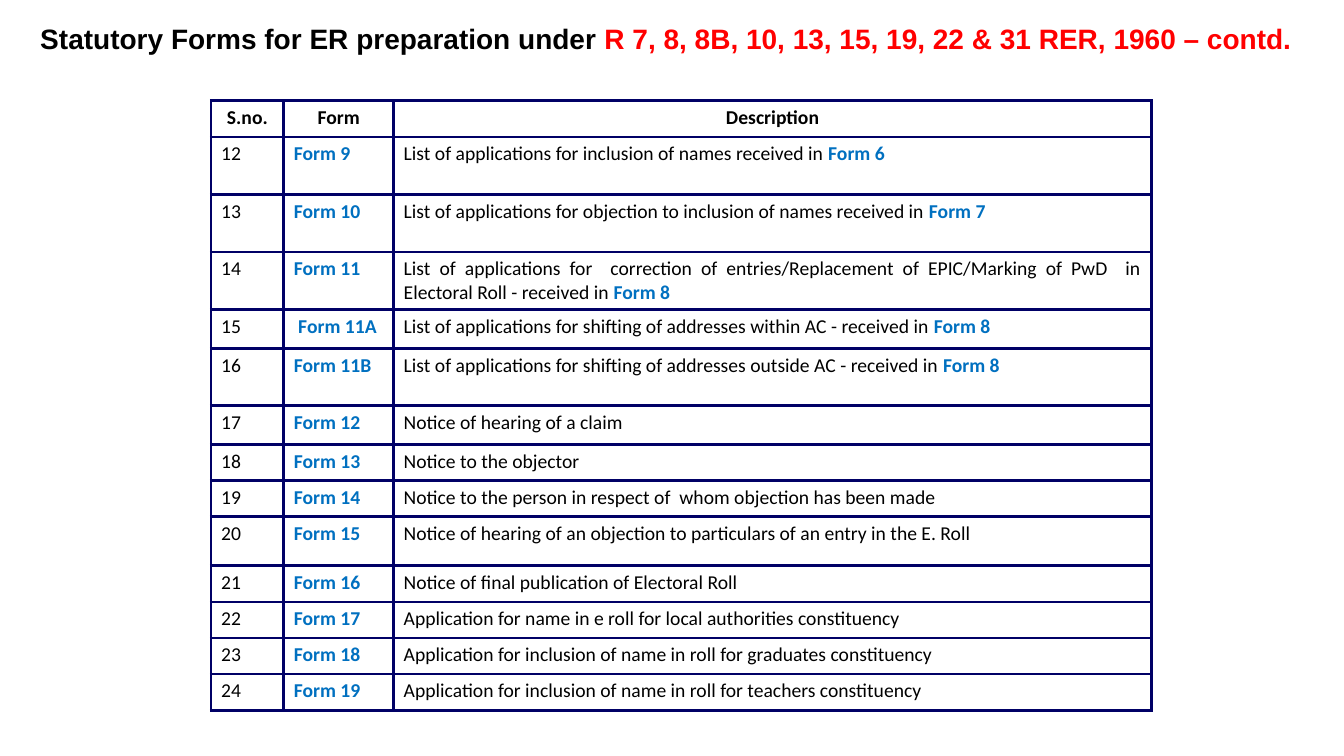
import pptx
import pptx.dml.color
import pptx.enum.text
import pptx.oxml
import pptx.oxml.ns
import pptx.util

Cm = pptx.util.Cm
ALIGN = pptx.enum.text.PP_ALIGN
ANCHOR = pptx.enum.text.MSO_ANCHOR

BLACK, RED, BLUE, NAVY = "000000", "FF0000", "0070C0", "000066"
FIRST_NUMBER = 12
COLUMN_WIDTHS = (1.83, 2.77, 19.1)
HEADINGS = ("S.no.", "Form", "Description")
SINGLE, RELAXED, MEDIUM, DOUBLE = 0.91, 0.97, 1.24, 1.45

FORMS = [
    ("Form 9", "List of applications for inclusion of names received in ", "Form 6", DOUBLE),
    ("Form 10", "List of applications for objection to inclusion of names received in ", "Form 7", DOUBLE),
    ("Form 11", "List of applications for  correction of entries/Replacement of EPIC/Marking of PwD  in "
     "Electoral Roll - received in ", "Form 8", DOUBLE),
    (" Form 11A", "List of applications for shifting of addresses within AC - received in ", "Form 8", RELAXED),
    ("Form 11B", "List of applications for shifting of addresses outside AC - received in ", "Form 8", DOUBLE),
    ("Form 12", "Notice of hearing of a claim", "", RELAXED),
    ("Form 13", "Notice to the objector", "", SINGLE),
    ("Form 14", "Notice to the person in respect of  whom objection has been made", "", SINGLE),
    ("Form 15", "Notice of hearing of an objection to particulars of an entry in the E. Roll", "", MEDIUM),
    ("Form 16", "Notice of final publication of Electoral Roll", "", SINGLE),
    ("Form 17", "Application for name in e roll for local authorities constituency", "", SINGLE),
    ("Form 18", "Application for inclusion of name in roll for graduates constituency", "", SINGLE),
    ("Form 19", "Application for inclusion of name in roll for teachers constituency", "", SINGLE),
]


def rgb(hex_color):
    return pptx.dml.color.RGBColor.from_string(hex_color)


def add_runs(tf, runs, font, size, align):
    p = tf.paragraphs[0]
    p.alignment = align
    for text, color, bold in runs:
        r = p.add_run()
        r.text = text
        r.font.name = font
        r.font.size = pptx.util.Pt(size)
        r.font.bold = bold
        r.font.color.rgb = rgb(color)


def add_title(slide, runs):
    sp = slide.shapes.title
    sp.left, sp.top, sp.width, sp.height = Cm(0.76), Cm(0.41), Cm(32.79), Cm(1.12)
    tf = sp.text_frame
    tf.word_wrap = True
    tf.auto_size = pptx.enum.text.MSO_AUTO_SIZE.NONE
    tf.vertical_anchor = ANCHOR.MIDDLE
    add_runs(tf, runs, "Arial", 20, ALIGN.JUSTIFY)


def set_borders(cell, color, width):
    tcPr = cell._tc.get_or_add_tcPr()
    for side in ("lnL", "lnR", "lnT", "lnB"):
        tcPr.append(pptx.oxml.parse_xml(
            f'<a:{side} {pptx.oxml.ns.nsdecls("a")} w="{pptx.util.Pt(width)}">'
            f'<a:solidFill><a:srgbClr val="{color}"/></a:solidFill></a:{side}>'))


def fill_cell(cell, runs, align):
    set_borders(cell, NAVY, 2.25)
    cell.fill.background()
    cell.vertical_anchor = ANCHOR.TOP
    add_runs(cell.text_frame, runs, "Calibri", 14, align)


def fill_row(table, index, height, cells, align):
    table.rows[index].height = Cm(height)
    for column, runs in enumerate(cells):
        fill_cell(table.cell(index, column), runs, align)


def add_forms_table(slide):
    height = SINGLE + sum(form[-1] for form in FORMS)
    table = slide.shapes.add_table(len(FORMS) + 1, len(HEADINGS), Cm(5.32), Cm(2.54),
                                   Cm(sum(COLUMN_WIDTHS)), Cm(height)).table
    table.horz_banding = False
    table.first_row = False
    for column, width in zip(table.columns, COLUMN_WIDTHS):
        column.width = Cm(width)
    fill_row(table, 0, SINGLE, [[(text, BLACK, True)] for text in HEADINGS], ALIGN.CENTER)
    for i, (form, description, reference, row_height) in enumerate(FORMS):
        details = [(description, BLACK, False)]
        if reference:
            details.append((reference, BLUE, True))
        cells = [[(str(FIRST_NUMBER + i), BLACK, False)], [(form, BLUE, True)], details]
        fill_row(table, i + 1, row_height, cells, ALIGN.JUSTIFY)


def main():
    prs = pptx.Presentation()
    prs.slide_width, prs.slide_height = Cm(33.87), Cm(19.05)
    slide = prs.slides.add_slide(prs.slide_layouts[5])
    add_title(slide, [
        ("Statutory Forms for ER preparation under ", BLACK, True),
        ("R 7, 8, 8B, 10, 13, 15, 19, 22 & 31 RER, 1960 – contd.", RED, True),
    ])
    add_forms_table(slide)
    prs.save("out.pptx")


if __name__ == "__main__":
    main()
